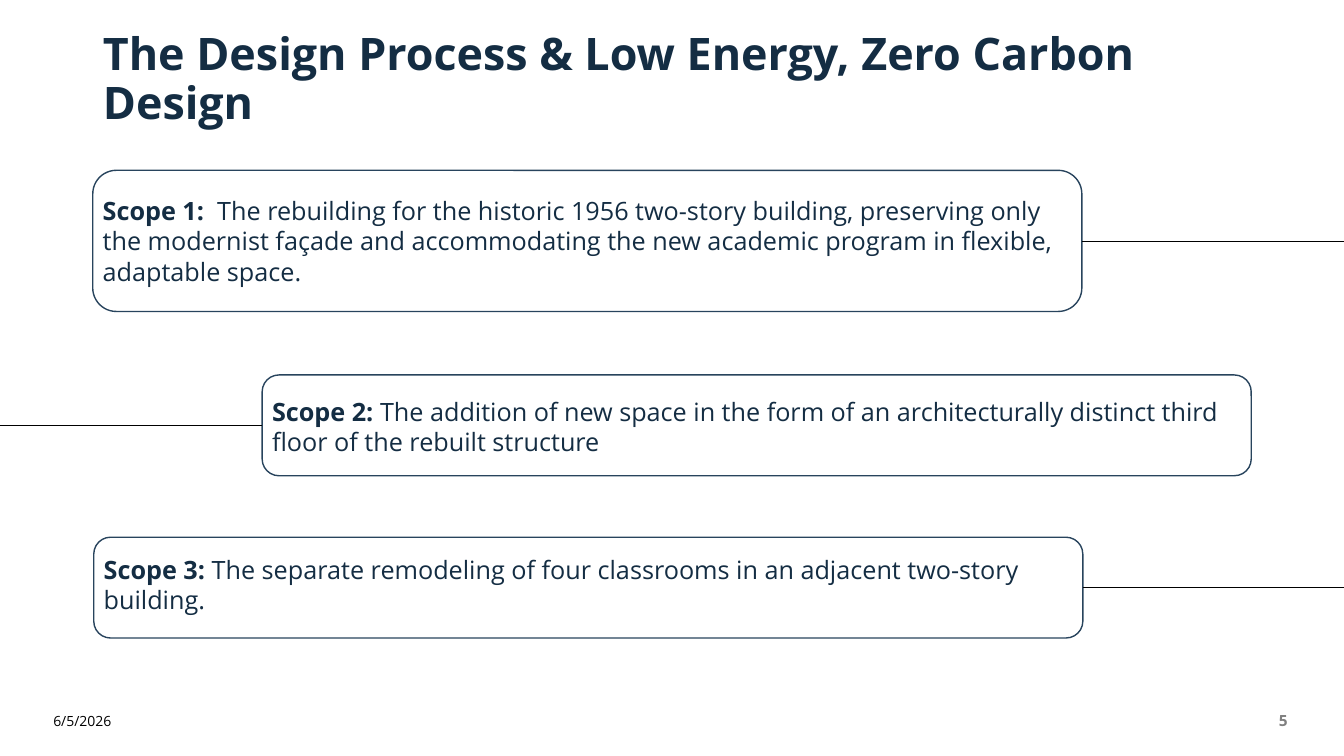
from pptx import Presentation
from pptx import util as u
from pptx.dml.color import RGBColor
from pptx.enum import shapes, text
from pptx.oxml.ns import qn
from lxml import etree

WIDE, HIGH = 13.33, 7.5
NAVY, EDGE, BLACK, GRAY = "142D43", "28445D", "000000", "808080"
CARD = 9.81

# left, top, height, text top, text height, line side, label, wording
SCOPES = [
    (0.92, 1.69, 1.4, 1.89, 1.01, "right", "Scope 1:  ",
     "The rebuilding for the historic 1956 two-story building, preserving only "
     "the modernist façade and accommodating the new academic program in "
     "flexible, adaptable space."),
    (2.6, 3.72, 1, 3.88, 0.71, "left", "Scope 2: ",
     "The addition of new space in the form of an architecturally distinct "
     "third floor of the rebuilt structure"),
    (0.93, 5.33, 1, 5.45, 0.71, "right", "Scope 3: ",
     "The separate remodeling of four classrooms in an adjacent two-story "
     "building."),
]


def color(code):
    return RGBColor.from_string(code)


def inches(*sizes):
    return [u.Inches(size) for size in sizes]


def style(item, **values):
    for name, value in values.items():
        setattr(item, name, value)


def write(frame, runs, size, tint, anchor=text.MSO_ANCHOR.MIDDLE, **para):
    """Fill a frame with one paragraph of (wording, bold) runs."""
    style(frame, word_wrap=True, auto_size=text.MSO_AUTO_SIZE.NONE,
          vertical_anchor=anchor)
    line = frame.paragraphs[0]
    style(line, **para)
    for words, bold in runs:
        run = line.add_run()
        run.text = words
        style(run.font, name="Open Sans", size=u.Pt(size), bold=bold)
        run.font.color.rgb = color(tint)


def label(slide, box, *args, **para):
    write(slide.shapes.add_textbox(*inches(*box)).text_frame, *args, **para)


def link(slide, start, end, y):
    line = slide.shapes.add_connector(
        shapes.MSO_CONNECTOR.STRAIGHT, *inches(start, y, end, y))
    line.line.color.rgb = color(BLACK)
    line.line.width = u.Pt(0.5)
    etree.SubElement(line._element.spPr, qn("a:effectLst"))


def head(slide, box):
    title = slide.shapes.title
    style(title, **dict(zip(("left", "top", "width", "height"), inches(*box))))
    write(title.text_frame,
          [("The Design Process & Low Energy, Zero Carbon Design", True)],
          32, NAVY, alignment=text.PP_ALIGN.LEFT, line_spacing=0.9)


def scope(slide, left, top, high, text_top, text_high, side, name, words):
    """Draw a rounded card, its line to the slide edge and its wording."""
    card = slide.shapes.add_shape(
        shapes.MSO_SHAPE.ROUNDED_RECTANGLE, *inches(left, top, CARD, high))
    card.shadow.inherit = False
    card.fill.background()
    card.line.color.rgb = color(EDGE)
    card.line.width = u.Pt(1)
    ends = (left + CARD, WIDE) if side == "right" else (0, left)
    link(slide, *ends, top + high / 2)
    label(slide, (left, text_top, CARD, text_high),
          [(name, True), (words, False)], 18, NAVY, text.MSO_ANCHOR.TOP)


def foot(slide, top, high):
    label(slide, (0.43, top, 1.02, high), [("6/5/2026", False)], 10, BLACK)
    label(slide, (12.12, top, 0.75, high), [("5", True)], 11, GRAY,
          alignment=text.PP_ALIGN.RIGHT)


def main():
    deck = Presentation()
    deck.slide_width, deck.slide_height = inches(WIDE, HIGH)
    slide = deck.slides.add_slide(deck.slide_layouts.get_by_name("Title Only"))
    head(slide, (0.92, 0.4, 11.5, 0.8))
    for item in SCOPES:
        scope(slide, *item)
    foot(slide, 6.95, 0.4)
    deck.save("out.pptx")


if __name__ == "__main__":
    main()
